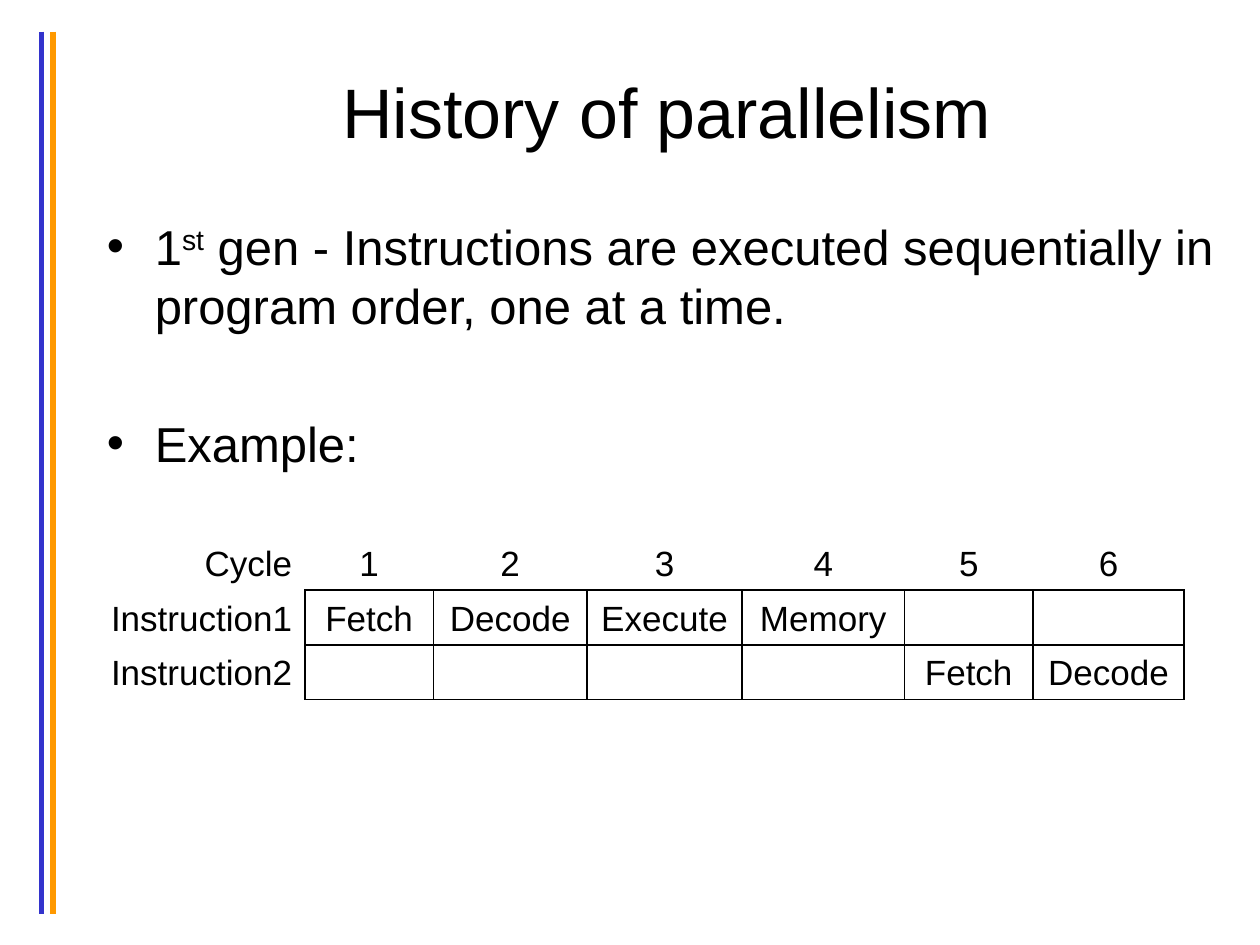
from dataclasses import dataclass

from lxml.etree import SubElement
from pptx import Presentation
from pptx.dml.color import RGBColor
from pptx.enum.shapes import MSO_CONNECTOR
from pptx.enum.text import MSO_ANCHOR, PP_ALIGN
from pptx.oxml.ns import qn
from pptx.slide import Slide
from pptx.util import Inches, Pt

BLACK = RGBColor(0x00, 0x00, 0x00)
WHITE = RGBColor(0xFF, 0xFF, 0xFF)
BLUE = RGBColor(0x33, 0x33, 0xCC)
ORANGE = RGBColor(0xFF, 0x99, 0x00)

COLUMN_WIDTHS = [1.67, 1.02, 1.22, 1.23, 1.29, 1.02, 1.2]
ROW_HEIGHT = 0.43
PIPELINE = [
    ["Cycle", "1", "2", "3", "4", "5", "6"],
    ["Instruction1", "Fetch", "Decode", "Execute", "Memory", "", ""],
    ["Instruction2", "", "", "", "", "Fetch", "Decode"],
]
BULLETS = [
    (["1", "st", " gen - Instructions are executed sequentially in program order, one at a time."], 0),
    (["Example:"], 45),
]


@dataclass
class SlideWriter:
    page: Slide
    font: str = "Arial"
    color: RGBColor = BLACK

    def format_span(self, span, size):
        span.font.name = self.font
        span.font.size = Pt(size)
        span.font.color.rgb = self.color

    def rule(self, x, color):
        line = self.page.shapes.add_connector(
            MSO_CONNECTOR.STRAIGHT, Inches(x), Inches(0.25), Inches(x), Inches(7.25))
        line.line.color.rgb = color
        line.line.width = Pt(3)
        SubElement(line._element.spPr, qn("a:effectLst"))

    def text_box(self, top, height, anchor):
        box = self.page.shapes.add_textbox(
            Inches(0.75), Inches(top), Inches(9.08), Inches(height))
        frame = box.text_frame
        frame.word_wrap = True
        frame.vertical_anchor = anchor
        return frame

    def title(self, text):
        frame = self.text_box(0.25, 1.25, MSO_ANCHOR.MIDDLE)
        frame.text = text
        para = frame.paragraphs[0]
        para.alignment = PP_ALIGN.CENTER
        self.format_span(para.runs[0], 40)

    def bullet_list(self, bullets):
        frame = self.text_box(1.67, 2.42, MSO_ANCHOR.TOP)
        for index, (pieces, gap) in enumerate(bullets):
            para = frame.add_paragraph() if index else frame.paragraphs[0]
            para.space_before = Pt(gap)
            properties = para._p.get_or_add_pPr()
            properties.set("marL", str(Inches(0.38)))
            properties.set("indent", str(-Inches(0.38)))
            SubElement(properties, qn("a:buFont"), typeface=self.font)
            SubElement(properties, qn("a:buChar"), char="•")
            for piece in pieces:
                span = para.add_run()
                span.text = piece
                self.format_span(span, 28)
                if piece == "st":
                    span.font._element.set("baseline", "30000")

    def cell_borders(self, cell, colors):
        properties = cell._tc.get_or_add_tcPr()
        for side, color in zip("LRTB", colors):
            line = SubElement(properties, qn(f"a:ln{side}"), w=str(Pt(1)))
            fill = SubElement(line, qn("a:solidFill"))
            SubElement(fill, qn("a:srgbClr"), val=str(color))

    def pipeline_table(self, rows):
        table = self.page.shapes.add_table(
            len(rows), len(COLUMN_WIDTHS), Inches(0.75), Inches(4.25),
            Inches(sum(COLUMN_WIDTHS)), Inches(ROW_HEIGHT * len(rows))).table
        table.first_row = False
        table.horz_banding = False
        for column, width in zip(table.columns, COLUMN_WIDTHS):
            column.width = Inches(width)
        for r, values in enumerate(rows):
            table.rows[r].height = Inches(ROW_HEIGHT)
            for c, value in enumerate(values):
                cell = table.cell(r, c)
                in_grid = r > 0 and c > 0
                edges = [in_grid, r > 0, in_grid, c > 0]
                self.cell_borders(cell, [BLACK if edge else WHITE for edge in edges])
                cell.fill.background()
                cell.vertical_anchor = MSO_ANCHOR.BOTTOM
                cell.text = value
                para = cell.text_frame.paragraphs[0]
                para.alignment = PP_ALIGN.CENTER if c else PP_ALIGN.RIGHT
                for span in para.runs:
                    self.format_span(span, 20)


def main():
    deck = Presentation()
    deck.slide_width = Inches(10)
    deck.slide_height = Inches(7.5)
    writer = SlideWriter(deck.slides.add_slide(deck.slide_layouts[6]))
    writer.rule(0.33, BLUE)
    writer.rule(0.42, ORANGE)
    writer.title("History of parallelism")
    writer.bullet_list(BULLETS)
    writer.pipeline_table(PIPELINE)
    deck.save("out.pptx")


if __name__ == "__main__":
    main()
